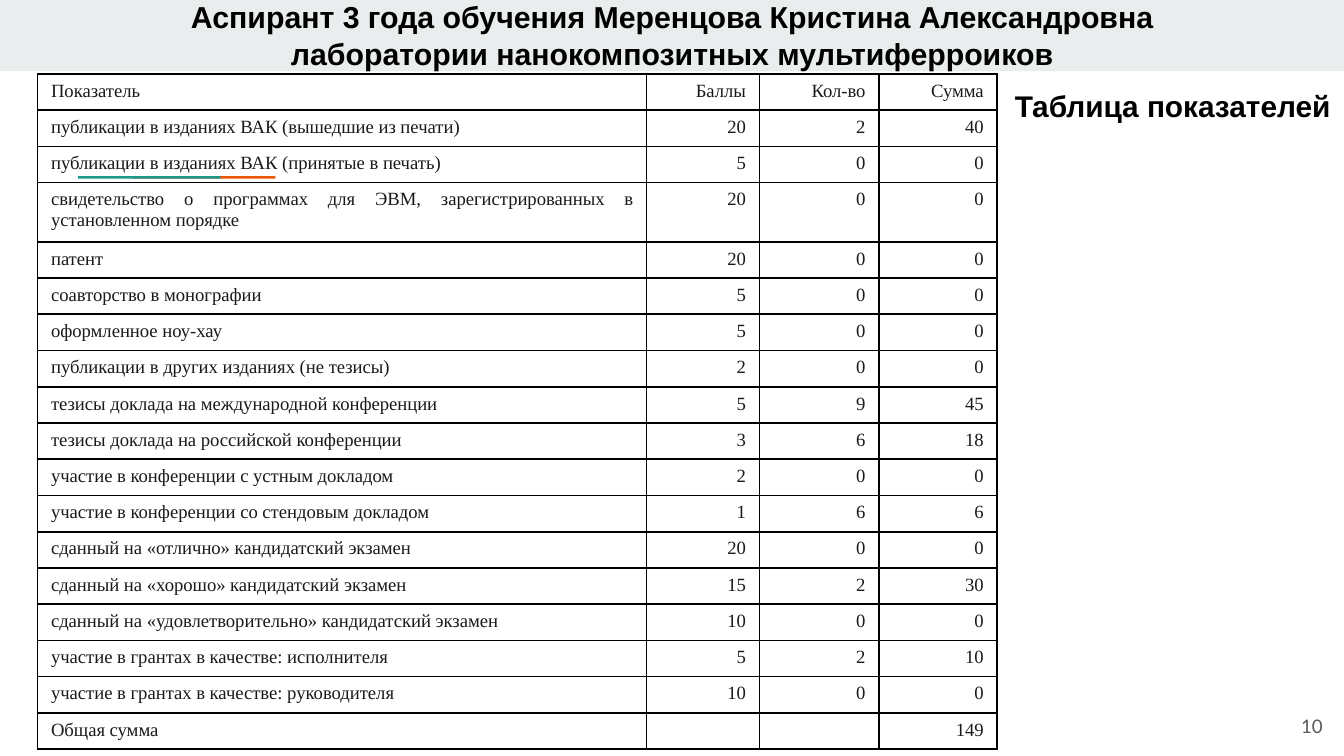
"""Builds the slide with a postgraduate student's table of indicators."""
from lxml.etree import SubElement
from pptx import Presentation
from pptx.dml.color import RGBColor
from pptx.enum.shapes import MSO_SHAPE as Shape
from pptx.enum.text import MSO_ANCHOR as Anchor, MSO_AUTO_SIZE as AutoSize, PP_ALIGN as Align
from pptx.oxml.ns import qn
from pptx.util import Inches, Pt

BLACK = RGBColor(0x00, 0x00, 0x00)
INK = RGBColor(0x1A, 0x1A, 0x1A)
GREY = RGBColor(0x59, 0x59, 0x59)
BAND = RGBColor(0xE9, 0xED, 0xEE)
ORANGE = RGBColor(0xEB, 0x56, 0x00)
TEAL = RGBColor(0x1A, 0x99, 0x88)

SLIDE_WIDTH = Inches(10)
SLIDE_HEIGHT = SLIDE_WIDTH * 9 // 16
TITLE = [
    "Аспирант 3 года обучения Меренцова Кристина Александровна",
    "лаборатории нанокомпозитных мультиферроиков",
]
CAPTION = "Таблица показателей"
PAGE_NUMBER = "10"
INDICATORS = [
    ("Показатель", "Баллы", "Кол-во", "Сумма"),
    ("публикации в изданиях ВАК (вышедшие из печати)", 20, 2, 40),
    ("публикации в изданиях ВАК (принятые в печать)", 5, 0, 0),
    ("свидетельство о программах для ЭВМ, зарегистрированных в установленном порядке", 20, 0, 0),
    ("патент", 20, 0, 0),
    ("соавторство в монографии", 5, 0, 0),
    ("оформленное ноу-хау", 5, 0, 0),
    ("публикации в других изданиях (не тезисы)", 2, 0, 0),
    ("тезисы доклада на международной конференции", 5, 9, 45),
    ("тезисы доклада на российской конференции", 3, 6, 18),
    ("участие в конференции с устным докладом", 2, 0, 0),
    ("участие в конференции со стендовым докладом", 1, 6, 6),
    ("сданный на «отлично» кандидатский экзамен", 20, 0, 0),
    ("сданный на «хорошо» кандидатский экзамен", 15, 2, 30),
    ("сданный на «удовлетворительно» кандидатский экзамен", 10, 0, 0),
    ("участие в грантах в качестве: исполнителя", 5, 2, 10),
    ("участие в грантах в качестве: руководителя", 10, 0, 0),
    ("Общая сумма", "", "", 149),
]
COLUMN_WIDTHS = [4.53, 0.84, 0.89, 0.88]
ROW_HEIGHT, TALL_ROW_HEIGHT, TALL_ROW = 0.27, 0.44, 3
BACKDROP = [
    (0, 0, 10, 0.53, BAND),
    (0.99, 1.31, 1.06, 0.02, ORANGE),
    (0.58, 1.31, 1.06, 0.02, TEAL),
]


def style(paragraph, align, font_name, size, color, bold=False):
    paragraph.alignment = align
    font = paragraph.font
    font.name, font.size, font.bold = font_name, Pt(size), bold
    font.color.rgb = color


def set_margins(frame):
    frame.margin_left = frame.margin_right = Inches(0.1)
    frame.margin_top = frame.margin_bottom = Inches(0.1)
    frame.word_wrap = True


def add_label(shapes, box, text, anchor, *look):
    frame = shapes.add_textbox(*map(Inches, box)).text_frame
    set_margins(frame)
    frame.vertical_anchor = anchor
    frame.text = text
    style(frame.paragraphs[0], Align.RIGHT, *look)


def add_borders(cell):
    properties = cell._tc.get_or_add_tcPr()
    for index, side in enumerate(("lnL", "lnR", "lnT", "lnB")):
        line = properties.makeelement(qn(f"a:{side}"), {"w": str(Pt(1))})
        fill = SubElement(line, qn("a:solidFill"))
        SubElement(fill, qn("a:srgbClr"), val=str(BLACK))
        properties.insert(index, line)


def add_backdrop(shapes):
    for position, (*box, color) in enumerate(BACKDROP, start=2):
        bar = shapes.add_shape(Shape.RECTANGLE, *map(Inches, box))
        bar.shadow.inherit = False
        bar.fill.solid()
        bar.fill.fore_color.rgb = color
        bar.line.fill.background()
        shapes._spTree.insert(position, bar._element)


def add_title(title):
    title.left, title.top, title.width, title.height = map(Inches, (0, -0.11, 10, 0.74))
    frame = title.text_frame
    set_margins(frame)
    frame.auto_size = AutoSize.NONE
    frame.vertical_anchor = Anchor.TOP
    frame.text = "\n".join(TITLE)
    for paragraph in frame.paragraphs:
        style(paragraph, Align.CENTER, "Arial", 16.2, BLACK, True)
        paragraph.space_before = Pt(0)


def add_indicators(shapes):
    heights = [TALL_ROW_HEIGHT if i == TALL_ROW else ROW_HEIGHT for i in range(len(INDICATORS))]
    box = (0.28, 0.55, sum(COLUMN_WIDTHS), sum(heights))
    table = shapes.add_table(len(heights), len(COLUMN_WIDTHS), *map(Inches, box)).table
    table.first_row = table.horz_banding = False
    for column, width in zip(table.columns, COLUMN_WIDTHS):
        column.width = Inches(width)
    for row, height, values in zip(table.rows, heights, INDICATORS):
        row.height = Inches(height)
        for index, (cell, value) in enumerate(zip(row.cells, values)):
            cell.text = str(value)
            cell.fill.background()
            add_borders(cell)
            paragraph = cell.text_frame.paragraphs[0]
            align = Align.RIGHT if index else Align.JUSTIFY
            style(paragraph, align, "Times New Roman", 10, INK)
            if value == "":
                SubElement(paragraph._p, qn("a:endParaRPr"), sz="1000")


def main():
    deck = Presentation()
    deck.slide_width, deck.slide_height = SLIDE_WIDTH, SLIDE_HEIGHT
    shapes = deck.slides.add_slide(deck.slide_layouts[5]).shapes
    add_backdrop(shapes)
    add_title(shapes.title)
    add_label(shapes, (7.31, 0.55, 2.69, 0.74), CAPTION, Anchor.TOP, "Arial", 16, BLACK, True)
    add_label(shapes, (9.34, 5.19, 0.6, 0.43), PAGE_NUMBER, Anchor.MIDDLE, "Lato", 10, GREY)
    add_indicators(shapes)
    deck.save("out.pptx")


if __name__ == "__main__":
    main()
